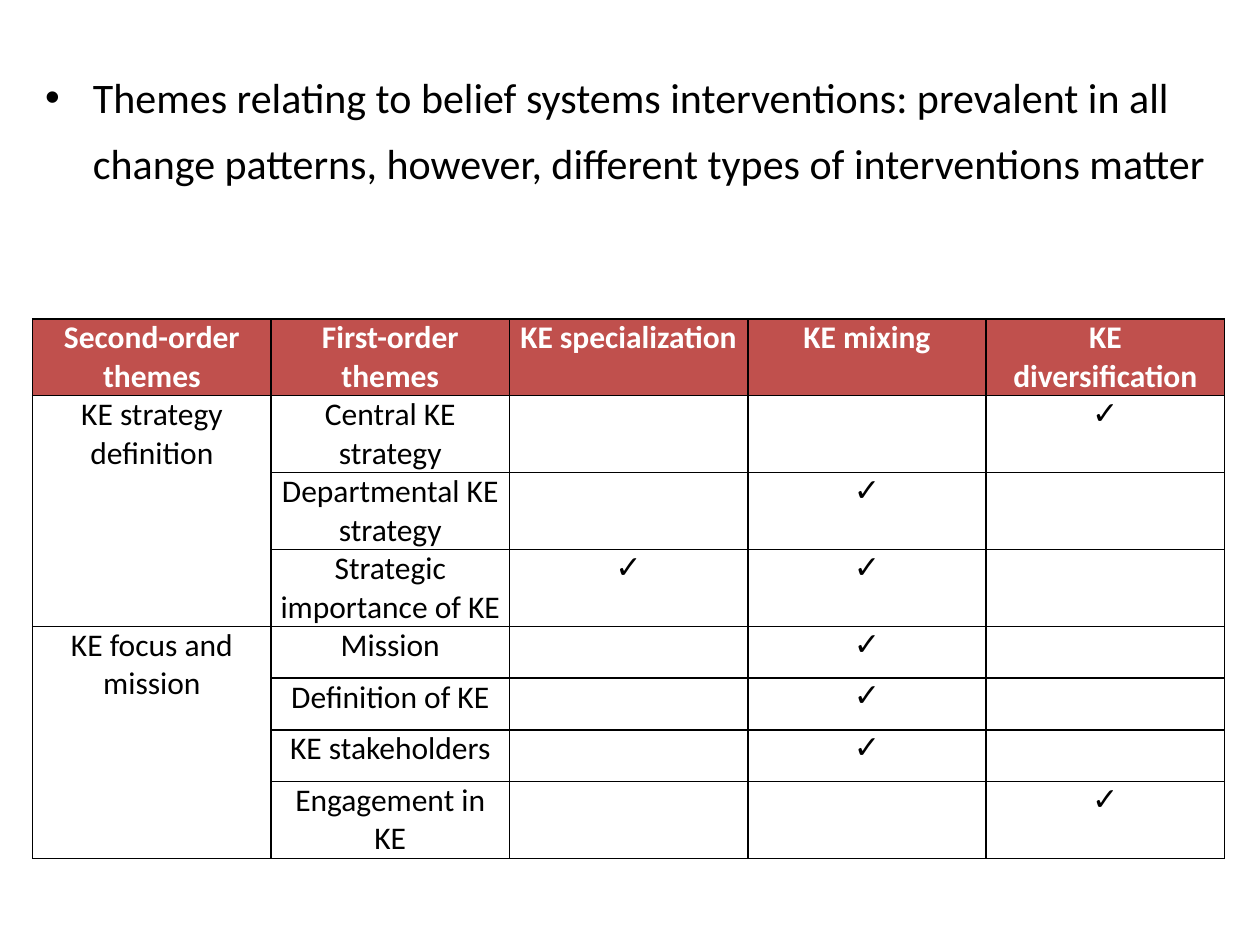
from lxml import etree
from pptx import Presentation
from pptx.dml.color import RGBColor
from pptx.enum.text import PP_ALIGN
from pptx.oxml.ns import qn
from pptx.util import Inches, Pt

CENTER = PP_ALIGN.CENTER
LEFT, WIDTH = 0.26, 9.46
BLACK, WHITE, RED = "000000", "FFFFFF", "C0504D"
TICK = "✓"
MESSAGE = ("Themes relating to belief systems interventions: prevalent in all "
           "change patterns, however, different types of interventions matter")
PATTERNS = ["KE specialization", "KE mixing", "KE diversification"]
HEADINGS = ["Second-order themes", "First-order themes"] + PATTERNS
ONE_LINE, TWO_LINES = 0.41, 0.61
THEMES = {
    "KE strategy definition": [
        ("Central KE strategy", TWO_LINES, {2}),
        ("Departmental KE strategy", TWO_LINES, {1}),
        ("Strategic importance of KE", TWO_LINES, {0, 1}),
    ],
    "KE focus and mission": [
        ("Mission", ONE_LINE, {1}),
        ("Definition of KE", ONE_LINE, {1}),
        ("KE stakeholders", ONE_LINE, {1}),
        ("Engagement in KE", TWO_LINES, {2}),
    ],
}


def color(value):
    return RGBColor.from_string(value)


def style_font(font, size, value, name="Calibri", bold=False):
    font.size = Pt(size)
    font.name = name
    font.bold = bold
    font.color.rgb = color(value)


def add_borders(cell):
    properties = cell._tc.get_or_add_tcPr()
    for position, side in enumerate(("lnL", "lnR", "lnT", "lnB")):
        line = etree.Element(qn(f"a:{side}"), w=str(Pt(1)))
        fill = etree.SubElement(line, qn("a:solidFill"))
        etree.SubElement(fill, qn("a:srgbClr"), val=BLACK)
        properties.insert(position, line)


def fill_cell(cell, text, heading=False):
    cell.margin_left = cell.margin_right = Inches(0.07)
    cell.margin_top = cell.margin_bottom = 0
    if heading:
        cell.fill.solid()
        cell.fill.fore_color.rgb = color(RED)
    else:
        cell.fill.background()
    add_borders(cell)
    paragraph = cell.text_frame.paragraphs[0]
    paragraph.text = text
    paragraph.alignment = CENTER
    style_font(paragraph.font, 18, BLACK)
    for run in paragraph.runs:
        style_font(run.font, 18, WHITE if heading else BLACK,
                   "Arial" if text == TICK else "Calibri", heading)


def add_theme_table(slide):
    rows = [(HEADINGS, TWO_LINES)]
    spans = []
    for second_order, first_order in THEMES.items():
        start = len(rows)
        for index, (theme, height, ticked) in enumerate(first_order):
            ticks = [TICK if i in ticked else "" for i in range(len(PATTERNS))]
            rows.append(([second_order if index == 0 else "", theme] + ticks, height))
        spans.append((start, len(rows) - 1))

    total = sum(height for _, height in rows)
    table = slide.shapes.add_table(
        len(rows), len(HEADINGS), Inches(LEFT), Inches(2.53),
        Inches(WIDTH), Inches(total)).table
    table.horz_banding = False
    for column in table.columns:
        column.width = Inches(WIDTH / len(HEADINGS))
    for r, (texts, height) in enumerate(rows):
        table.rows[r].height = Inches(height)
        for c, text in enumerate(texts):
            fill_cell(table.cell(r, c), text, heading=r == 0)
    for first, last in spans:
        table.cell(first, 0).merge(table.cell(last, 0))


def add_bullet_message(slide):
    frame = slide.shapes.add_textbox(
        Inches(LEFT), Inches(0.4), Inches(WIDTH), Inches(6.83)).text_frame
    frame.word_wrap = True
    paragraph = frame.paragraphs[0]
    paragraph.text = MESSAGE
    paragraph.line_spacing = 1.3
    paragraph.space_before = Pt(4.8)
    style_font(paragraph.runs[0].font, 24, BLACK)
    properties = paragraph._p.get_or_add_pPr()
    properties.set("marL", str(Inches(0.38)))
    properties.set("indent", str(Inches(-0.38)))
    etree.SubElement(properties, qn("a:buFont"), typeface="Arial")
    etree.SubElement(properties, qn("a:buChar"), char="•")


def main():
    presentation = Presentation()
    presentation.slide_width = Inches(10)
    presentation.slide_height = Inches(7.5)
    slide = presentation.slides.add_slide(presentation.slide_layouts[6])
    add_theme_table(slide)
    add_bullet_message(slide)
    presentation.save("out.pptx")


if __name__ == "__main__":
    main()
